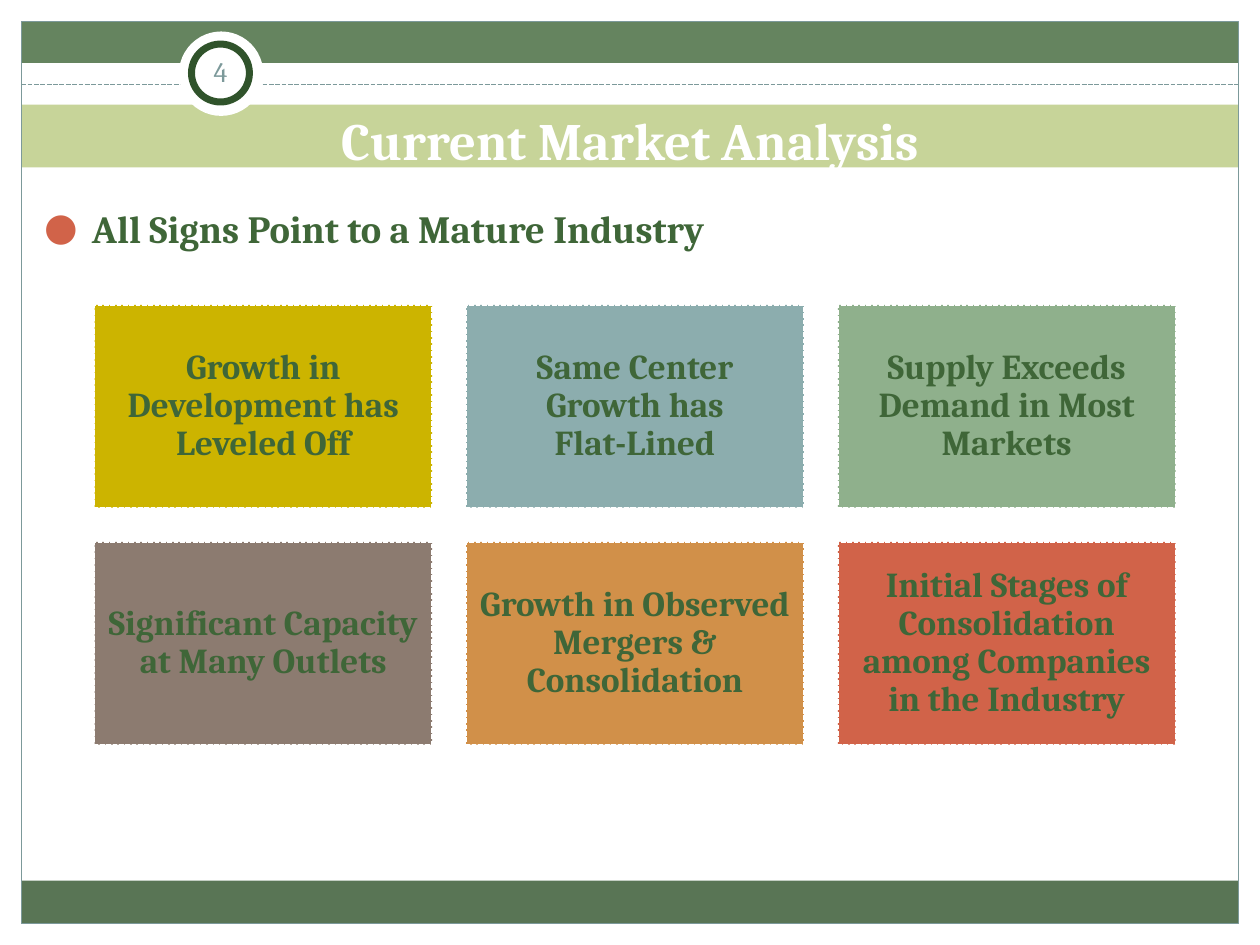
from lxml import etree
from pptx import Presentation
from pptx.dml.color import RGBColor
from pptx.enum.dml import MSO_LINE
from pptx.enum.shapes import MSO_CONNECTOR, MSO_SHAPE
from pptx.enum.text import MSO_ANCHOR, MSO_AUTO_SIZE, PP_ALIGN
from pptx.oxml.ns import qn
from pptx.util import Inches, Pt

RECTANGLE, OVAL = MSO_SHAPE.RECTANGLE, MSO_SHAPE.OVAL
TOP, MIDDLE, BOTTOM = MSO_ANCHOR.TOP, MSO_ANCHOR.MIDDLE, MSO_ANCHOR.BOTTOM
LEFT, CENTER = PP_ALIGN.LEFT, PP_ALIGN.CENTER
DASH = MSO_LINE.SQUARE_DOT  # sysDash is set by its own preset below
FONT = "Cambria"

COLORS = {
    "white": "FFFFFF", "green": "3F6638", "dark green": "30532B",
    "lime": "B5C678", "frame": "7C999A", "red": "D16349",
    "yellow": "CCB400", "blue": "8CADAE", "sage": "8FB08C",
    "brown": "8C7B70", "orange": "D19049",
}

TITLE = "Current Market Analysis"
HEADING = "All Signs Point to a Mature Industry"
SLIDE_NUMBER = "4"
SIGNS = [
    ("Growth in Development has Leveled Off", "yellow"),
    ("Same Center Growth has\nFlat-Lined", "blue"),
    ("Supply Exceeds Demand in Most Markets", "sage"),
    ("Significant Capacity at Many Outlets", "brown"),
    ("Growth in Observed Mergers & Consolidation", "orange"),
    ("Initial Stages of Consolidation among Companies in the Industry", "red"),
]
# left, top, width, height, colour, opacity in percent
BANDS = [
    (0.17, 0.17, 9.66, 0.33, "green", 80),
    (0.17, 0.83, 9.66, 0.5, "lime", 75),
    (0.17, 6.99, 9.66, 0.34, "dark green", 80),
]
COLUMNS = 3
GRID_LEFT, GRID_TOP = 0.75, 2.42
BOX_WIDTH, BOX_HEIGHT, GAP = 2.68, 1.61, 0.27


def rgb(name):
    return RGBColor.from_string(COLORS[name])


def set_line(line, color, width, dashed=False):
    line.color.rgb = rgb(color)
    line.width = Pt(width)
    if dashed:
        line.dash_style = DASH
        line.color  # keeps the solid fill ahead of the dash
        line._ln.find(qn("a:prstDash")).set("val", "sysDash")


def place(shape, left, top, width, height):
    shape.left, shape.top = Inches(left), Inches(top)
    shape.width, shape.height = Inches(width), Inches(height)


def add_shape(slide, kind, box, fill=None, opacity=100):
    shape = slide.shapes.add_shape(kind, *map(Inches, box))
    shape.shadow.inherit = False
    shape.line.fill.background()
    if fill is None:
        shape.fill.background()
        return shape
    shape.fill.solid()
    shape.fill.fore_color.rgb = rgb(fill)
    if opacity < 100:
        color = shape.element.spPr.find(qn("a:solidFill"))[0]
        etree.SubElement(color, qn("a:alpha"), val=str(opacity * 1000))
    return shape


def write(shape, text, size, color, bold=True, align=CENTER, anchor=MIDDLE,
          inset=(0.1, 0.05), spacing=1.0):
    frame = shape.text_frame
    frame.word_wrap = True
    frame.auto_size = MSO_AUTO_SIZE.NONE
    frame.vertical_anchor = anchor
    frame.margin_left = frame.margin_right = Inches(inset[0])
    frame.margin_top = frame.margin_bottom = Inches(inset[1])
    paragraph = frame.paragraphs[0]
    paragraph.text = text.replace("\n", "\v")
    paragraph.alignment = align
    paragraph.line_spacing = spacing
    paragraph.space_before = Pt(0)
    for run in paragraph.runs:
        run.font.name, run.font.size, run.font.bold = FONT, Pt(size), bold
        run.font.color.rgb = rgb(color)
    return paragraph


def add_bullet(paragraph, color, indent):
    properties = paragraph._p.get_or_add_pPr()
    properties.set("marL", str(Inches(indent)))
    properties.set("indent", str(-Inches(indent)))
    bullet_color = etree.SubElement(properties, qn("a:buClr"))
    etree.SubElement(bullet_color, qn("a:srgbClr"), val=COLORS[color])
    etree.SubElement(properties, qn("a:buFont"), typeface=FONT)
    etree.SubElement(properties, qn("a:buChar"), char="●")


def add_frame(slide):
    """Draw the bands, border, dashed rule and number badge."""
    for *box, color, opacity in BANDS:
        add_shape(slide, RECTANGLE, box, color, opacity)
    border = add_shape(slide, RECTANGLE, (0.17, 0.17, 9.66, 7.16))
    set_line(border.line, "frame", 0.75)

    rule = slide.shapes.add_connector(
        MSO_CONNECTOR.STRAIGHT, *map(Inches, (0.17, 0.67, 9.83, 0.67)))
    set_line(rule.line, "frame", 0.9, dashed=True)
    etree.SubElement(rule.element.spPr, qn("a:effectLst"))

    add_shape(slide, OVAL, (1.42, 0.25, 0.67, 0.67), "white")
    ring = add_shape(slide, OVAL, (1.52, 0.35, 0.46, 0.46), "white")
    set_line(ring.line, "dark green", 4)
    number = slide.shapes.add_textbox(*map(Inches, (1.5, 0.33, 0.5, 0.48)))
    write(number, SLIDE_NUMBER, 16, "frame", bold=False, inset=(0.05, 0.05))


def add_signs(slide):
    for index, (text, color) in enumerate(SIGNS):
        row, column = divmod(index, COLUMNS)
        box = (GRID_LEFT + column * (BOX_WIDTH + GAP),
               GRID_TOP + row * (BOX_HEIGHT + GAP), BOX_WIDTH, BOX_HEIGHT)
        shape = add_shape(slide, RECTANGLE, box, color)
        set_line(shape.line, "white", 0.9, dashed=True)
        write(shape, text, 20, "green", inset=(0.08, 0.08), spacing=0.9)


def main():
    presentation = Presentation()
    presentation.slide_width, presentation.slide_height = Inches(10), Inches(7.5)
    slide = presentation.slides.add_slide(presentation.slide_layouts[1])
    title, body = slide.placeholders
    add_frame(slide)

    place(title, 0.17, 0.83, 9.67, 0.58)
    write(title, TITLE, 30, "white", anchor=BOTTOM)
    place(body, 0.25, 1.58, 9.5, 0.81)
    heading = write(body, HEADING, 22, "green", align=LEFT, anchor=TOP)
    add_bullet(heading, "red", 0.38)
    for placeholder in (title, body):  # in front of the bands
        slide.shapes.element.append(placeholder.element)

    add_signs(slide)
    presentation.save("out.pptx")


if __name__ == "__main__":
    main()
